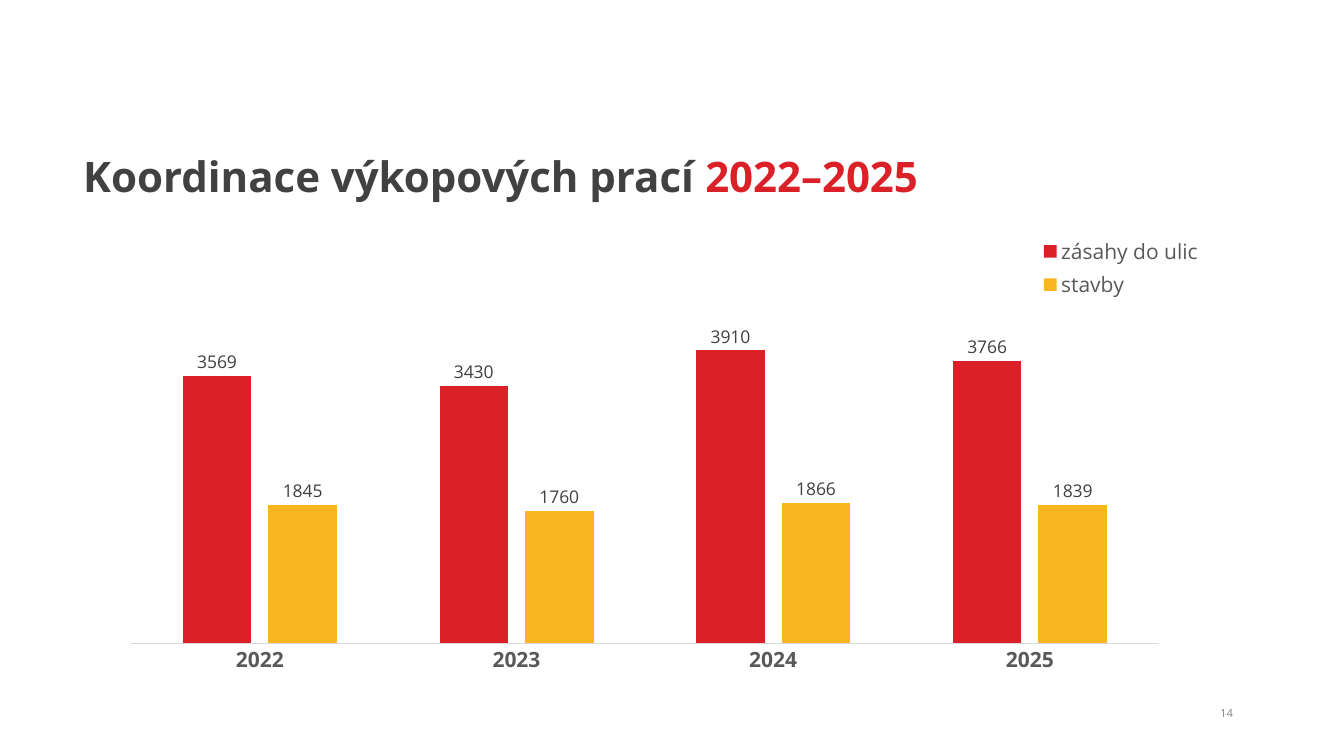
from dataclasses import dataclass

from lxml.etree import SubElement
from pptx import Presentation
from pptx.chart.data import CategoryChartData
from pptx.dml.color import RGBColor
from pptx.enum.chart import XL_CHART_TYPE as ChartType
from pptx.enum.chart import XL_LABEL_POSITION as LabelPos
from pptx.enum.chart import XL_LEGEND_POSITION as LegendPos
from pptx.enum.chart import XL_TICK_MARK as Tick
from pptx.enum.text import MSO_ANCHOR as Anchor
from pptx.enum.text import PP_ALIGN as Align
from pptx.oxml.ns import qn
from pptx.util import Pt

FONT = "Open Sans"
RED = RGBColor(0xDA, 0x21, 0x28)
YELLOW = RGBColor(0xFA, 0xB5, 0x22)
DARK = RGBColor(0x41, 0x41, 0x42)
LABEL_GRAY = RGBColor(0x40, 0x40, 0x40)
AXIS_GRAY = RGBColor(0x59, 0x59, 0x59)
PAGE_GRAY = RGBColor(0x80, 0x82, 0x85)
LINE_GRAY = RGBColor(0xD9, 0xD9, 0xD9)


@dataclass(frozen=True)
class Box:
    x: float
    y: float
    w: float
    h: float

    def in_points(self) -> tuple:
        return Pt(self.x), Pt(self.y), Pt(self.w), Pt(self.h)


@dataclass(frozen=True)
class Run:
    text: str
    color: RGBColor


@dataclass(frozen=True)
class Series:
    name: str
    values: tuple[int, ...]
    color: RGBColor


YEARS = ("2022", "2023", "2024", "2025")
SERIES = (
    Series("zásahy do ulic", (3569, 3430, 3910, 3766), RED),
    Series("stavby", (1845, 1760, 1866, 1839), YELLOW),
)
PLOT_LAYOUT = {
    "layoutTarget": "inner", "xMode": "edge", "yMode": "edge",
    "x": "0.007", "y": "0.163", "w": "0.95", "h": "0.748",
}


def set_font(font, size: float, color: RGBColor, bold: bool = False) -> None:
    font.name = FONT
    font.size = Pt(size)
    font.bold = bold
    font.color.rgb = color


def add_text(s, box: Box, *runs: Run, size: float, bold: bool = False,
             align=Align.LEFT, anchor=Anchor.MIDDLE) -> None:
    tf = s.shapes.add_textbox(*box.in_points()).text_frame
    tf.word_wrap = True
    tf.vertical_anchor = anchor
    tf.margin_left = tf.margin_right = tf.margin_top = tf.margin_bottom = 0
    p = tf.paragraphs[0]
    p.alignment = align
    for run in runs:
        r = p.add_run()
        r.text = run.text
        set_font(r.font, size, run.color, bold)


def place_plot(chart) -> None:
    area = chart._chartSpace.chart.plotArea
    for old in area.findall(qn("c:layout")):
        area.remove(old)
    layout = SubElement(area, qn("c:layout"))
    area.insert(0, layout)
    manual = SubElement(layout, qn("c:manualLayout"))
    for tag, value in PLOT_LAYOUT.items():
        SubElement(manual, qn(f"c:{tag}")).set("val", value)


def add_columns(s, box: Box) -> None:
    data = CategoryChartData()
    data.categories = YEARS
    for item in SERIES:
        data.add_series(item.name, item.values)
    chart = s.shapes.add_chart(
        ChartType.COLUMN_CLUSTERED, *box.in_points(), data).chart
    chart.has_title = False
    set_font(chart.font, 25, LABEL_GRAY)

    chart.has_legend = True
    chart.legend.position = LegendPos.CORNER
    chart.legend.include_in_layout = False
    set_font(chart.legend.font, 30, AXIS_GRAY)

    years = chart.category_axis
    years.major_tick_mark = years.minor_tick_mark = Tick.NONE
    years.format.line.color.rgb = LINE_GRAY
    years.format.line.width = Pt(0.75)
    set_font(years.tick_labels.font, 30, AXIS_GRAY, bold=True)

    counts = chart.value_axis
    counts.visible = False
    counts.has_major_gridlines = False
    counts.minimum_scale, counts.maximum_scale = 0, 4500

    plot = chart.plots[0]
    plot.gap_width, plot.overlap = 150, -25
    plot.vary_by_categories = False
    for item, series in zip(SERIES, plot.series):
        series.format.fill.solid()
        series.format.fill.fore_color.rgb = item.color
        labels = series.data_labels
        labels.show_value = True
        labels.position = LabelPos.OUTSIDE_END
        set_font(labels.font, 25, LABEL_GRAY)
    place_plot(chart)


def main() -> None:
    prs = Presentation()
    prs.slide_width, prs.slide_height = Pt(1919.5), Pt(1080)
    s = prs.slides.add_slide(prs.slide_layouts[6])
    add_text(s, Box(118.8, 137.5, 1642.3, 149.8),
             Run("Koordinace výkopových prací ", DARK), Run("2022–2025", RED),
             size=60, bold=True, anchor=Anchor.BOTTOM)
    add_text(s, Box(1653, 989.3, 108, 57.6), Run("14", PAGE_GRAY),
             size=16, align=Align.RIGHT)
    add_columns(s, Box(177, 332.6, 1543.7, 643))
    prs.save("out.pptx")


if __name__ == "__main__":
    main()
